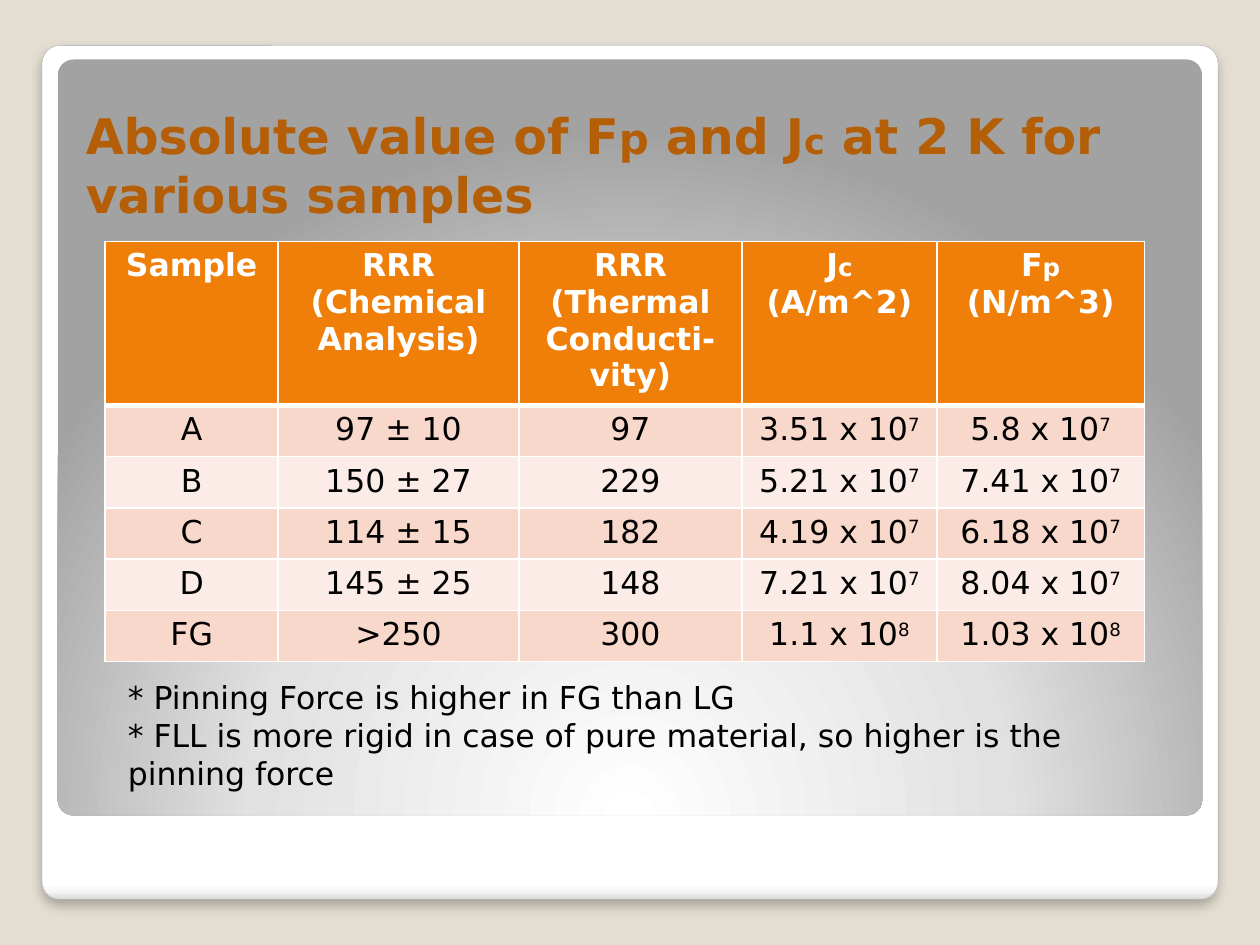
from lxml import etree
from pptx import Presentation
from pptx.dml.color import RGBColor
from pptx.enum.shapes import MSO_SHAPE
from pptx.enum.text import MSO_ANCHOR, PP_ALIGN
from pptx.oxml import parse_xml
from pptx.oxml.ns import nsdecls, qn
from pptx.util import Pt

ROUNDED = MSO_SHAPE.ROUNDED_RECTANGLE
BOTTOM = MSO_ANCHOR.BOTTOM
CENTER = PP_ALIGN.CENTER
FONT = "DejaVu Sans"
COLORS = {
    "background": "E3DED1", "edge": "A4A4A4", "title": "B45F07",
    "header": "F07F09", "odd": "F9D8CC", "even": "FCECE7",
    "white": "FFFFFF", "black": "000000",
}
CARD_STOPS = [(0, "FFFFFF"), (98, "FFFFFF"), (99, "F7F7F7"), (100, "DADADA")]
PANEL_STOPS = [(0, "FFFFFF"), (55, "E1E1E1"), (100, "A2A2A2")]
LINEAR = '<a:lin ang="5400000" scaled="0"/>'
RADIAL = ('<a:path path="circle"><a:fillToRect l="50000" t="175000" '
          'r="50000" b="-75000"/></a:path>')

TITLE = [("Absolute value of F", 28), ("p", 24), (" and J", 28), ("c", 20),
         (" at 2 K for various samples", 28)]
HEADERS = [
    [("Sample", 18)],
    [("RRR (Chemical Analysis)", 18)],
    [("RRR (Thermal Conducti-vity)", 18)],
    [("J", 18), ("c", 14), (" (A/m^2)", 18)],
    [("F", 18), ("p", 14), (" (N/m^3)", 18)],
]
SAMPLES = [
    ("A", "97 ± 10", "97", "3.51 x 10^7", "5.8 x 10^7"),
    ("B", "150 ± 27", "229", "5.21 x 10^7", "7.41 x 10^7"),
    ("C", "114 ± 15", "182", "4.19 x 10^7", "6.18 x 10^7"),
    ("D", "145 ± 25", "148", "7.21 x 10^7", "8.04 x 10^7"),
    ("FG", ">250", "300", "1.1 x 10^8", "1.03 x 10^8"),
]
COLUMN_WIDTHS = [99, 137.5, 127.5, 111.5, 118.5]
HEADER_HEIGHT, ROW_HEIGHT = 91, 29.3
NOTES = [
    "* Pinning Force is higher in FG than LG",
    "* FLL is more rigid in case of pure material, so higher is the pinning force",
]


def color(name):
    return RGBColor.from_string(COLORS[name])


def add_span(para, text, size, color_name, bold=False):
    span = para.add_run()
    span.text = text
    span.font.name = FONT
    span.font.size = Pt(size)
    span.font.bold = bold
    span.font.color.rgb = color(color_name)
    return span


def add_rounded(page, box, stops, direction):
    shape = page.shapes.add_shape(ROUNDED, *map(Pt, box))
    shape.adjustments[0] = 0.021
    shape.shadow.inherit = False
    shape.line.fill.background()
    marks = "".join(
        f'<a:gs pos="{pos * 1000}"><a:srgbClr val="{value}"/></a:gs>'
        for pos, value in stops)
    gradient = parse_xml(
        f'<a:gradFill {nsdecls("a")} rotWithShape="1"><a:gsLst>{marks}</a:gsLst>'
        f'{direction}</a:gradFill>')
    shape._element.spPr.find(qn("a:prstGeom")).addnext(gradient)
    return shape


def add_frame(page, card_box, panel_box):
    card = add_rounded(page, card_box, CARD_STOPS, LINEAR)
    card.line.color.rgb = color("edge")
    card.line.width = Pt(0.16)
    effects = card._element.spPr.find(qn("a:effectLst"))
    effects.append(parse_xml(
        f'<a:outerShdw {nsdecls("a")} blurRad="{Pt(6)}" dist="{Pt(4)}" '
        f'dir="5400000" algn="t" rotWithShape="0"><a:srgbClr val="{COLORS["black"]}">'
        '<a:alpha val="25000"/></a:srgbClr></a:outerShdw>'))
    add_rounded(page, panel_box, PANEL_STOPS, RADIAL)


def add_title(page, box):
    frame = page.shapes.add_textbox(*map(Pt, box)).text_frame
    frame.word_wrap = True
    frame.vertical_anchor = BOTTOM
    for text, size in TITLE:
        add_span(frame.paragraphs[0], text, size, "title", bold=True)


def set_borders(cell, widths):
    properties = cell._tc.get_or_add_tcPr()
    for index, (side, width) in enumerate(zip("LRTB", widths)):
        border = etree.Element(qn(f"a:ln{side}"), w=str(Pt(width)))
        fill = etree.SubElement(border, qn("a:solidFill"))
        etree.SubElement(fill, qn("a:srgbClr"), val=COLORS["white"])
        properties.insert(index, border)


def style_cell(cell, fill_name, widths):
    cell.fill.solid()
    cell.fill.fore_color.rgb = color(fill_name)
    set_borders(cell, widths)
    para = cell.text_frame.paragraphs[0]
    para.alignment = CENTER
    return para


def add_samples(page, box):
    table = page.shapes.add_table(
        len(SAMPLES) + 1, len(HEADERS), *map(Pt, box)).table
    for column, width in zip(table.columns, COLUMN_WIDTHS):
        column.width = Pt(width)
    for index, row in enumerate(table.rows):
        row.height = Pt(ROW_HEIGHT if index else HEADER_HEIGHT)
    for column, parts in enumerate(HEADERS):
        para = style_cell(table.cell(0, column), "header", (1, 1, 1, 3))
        for text, size in parts:
            add_span(para, text, size, "white", bold=True)
    for row, sample in enumerate(SAMPLES, 1):
        top = 3 if row == 1 else 1
        for column, value in enumerate(sample):
            para = style_cell(table.cell(row, column),
                              "odd" if row % 2 else "even", (1, 1, top, 1))
            base, _, exponent = value.partition("^")
            add_span(para, base, 18, "black")
            if exponent:
                span = add_span(para, exponent, 18, "black")
                span.font._element.set("baseline", "30000")


def add_notes(page, box):
    frame = page.shapes.add_textbox(*map(Pt, box)).text_frame
    frame.word_wrap = True
    for index, note in enumerate(NOTES):
        para = frame.add_paragraph() if index else frame.paragraphs[0]
        add_span(para, note, 18, "black")


def main():
    deck = Presentation()
    deck.slide_width, deck.slide_height = Pt(720), Pt(540)
    page = deck.slides.add_slide(deck.slide_layouts[6])
    page.background.fill.solid()
    page.background.fill.fore_color.rgb = color("background")
    add_frame(page, (24, 26, 672, 488), (33, 34, 654, 432))
    add_title(page, (42, 48, 612, 83))
    add_samples(page, (60, 138, sum(COLUMN_WIDTHS),
                       HEADER_HEIGHT + ROW_HEIGHT * len(SAMPLES)))
    add_notes(page, (66, 384, 576, 73))
    deck.save("out.pptx")


if __name__ == "__main__":
    main()
